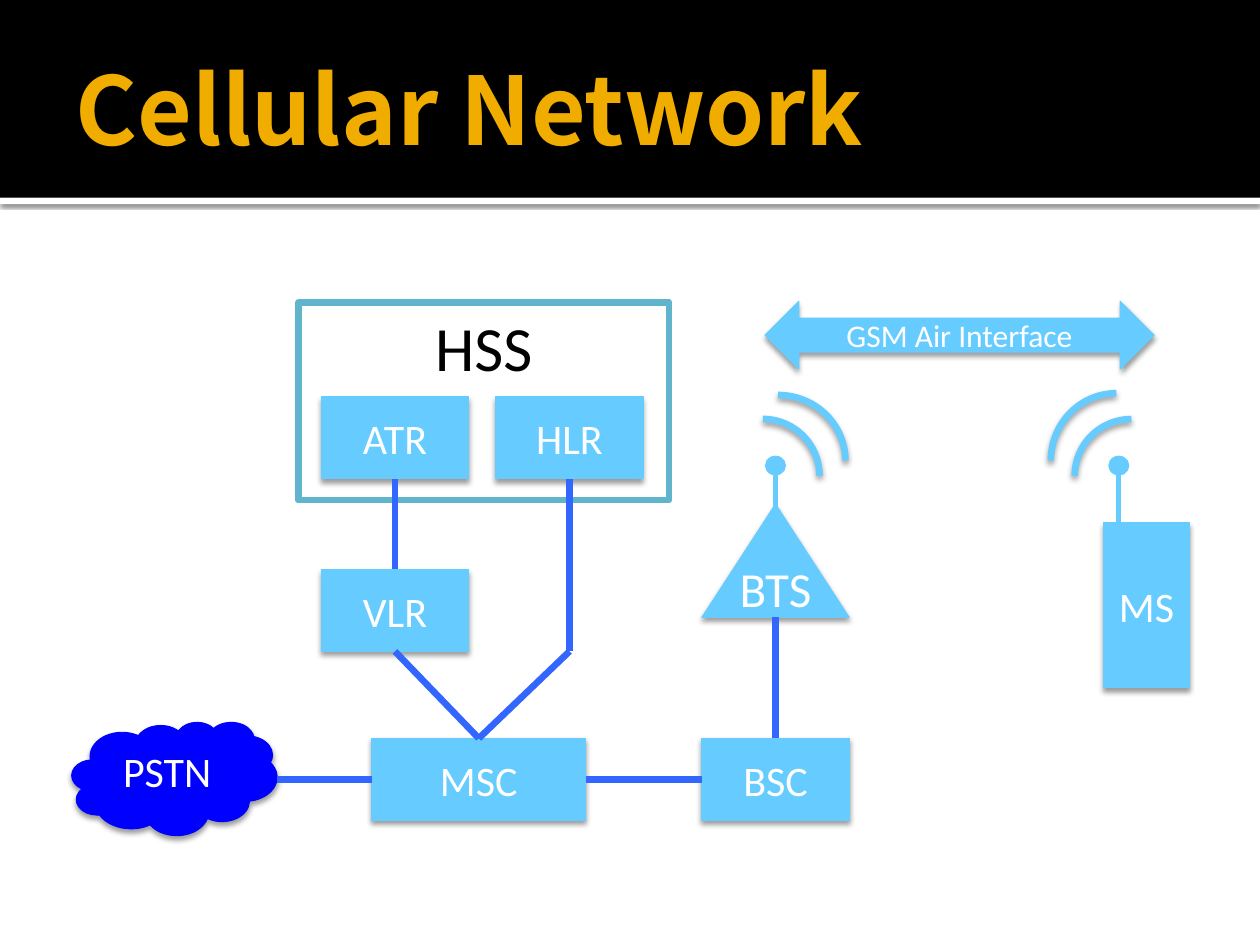
from lxml import etree
from pptx import Presentation
from pptx.dml.color import RGBColor
from pptx.enum import shapes, text
from pptx.oxml.ns import qn
from pptx.util import Inches, Pt

HUE = {"black": "000000", "white": "FFFFFF", "gold": "F0AD00", "sky": "66CCFF",
       "blue": "0000FF", "wire": "3366FF", "teal": "60B5CC"}
KIND = shapes.MSO_SHAPE
MID, TOP = text.MSO_ANCHOR.MIDDLE, text.MSO_ANCHOR.TOP
COLS, ROWS = 100, 75            # slide grid: ten cells to the inch
NODE = (11.7, 6.5)              # columns and rows of one network node
BOLD_LINE = 3.78

deck = Presentation()
deck.slide_width, deck.slide_height = Inches(10), Inches(7.5)
slide = deck.slides.add_slide(deck.slide_layouts[6])


def cell(*nums):
    return [round(n * deck.slide_width / COLS) for n in nums]


def color(name):
    return RGBColor.from_string(HUE[name])


def part(box, x, y, w, h):
    """Area inside a box, measured from its top left corner."""
    return box[0] + x, box[1] + y, w, h


def shade(item, alpha=None, blur=3.1, dist=2):
    """Give an item a soft shadow below it, or none at all."""
    props = item._element.spPr
    for old in props.findall(qn("a:effectLst")):
        props.remove(old)
    list_ = etree.SubElement(props, qn("a:effectLst"))
    if alpha:
        drop = etree.SubElement(list_, qn("a:outerShdw"), blurRad=str(Pt(blur)),
                                dist=str(Pt(dist)), dir="5400000", rotWithShape="0")
        tint = etree.SubElement(drop, qn("a:srgbClr"), val=HUE["black"])
        etree.SubElement(tint, qn("a:alpha"), val=str(alpha * 1000))


def write(item, words, size=24, hue="white", font="Calibri", bold=False,
          align=text.PP_ALIGN.CENTER, anchor=MID):
    frame = item.text_frame
    frame.word_wrap, frame.vertical_anchor = True, anchor
    para = frame.paragraphs[0]
    para.alignment = align
    run = para.add_run()
    run.text = words
    run.font.size, run.font.name, run.font.bold = Pt(size), font, bold
    run.font.color.rgb = color(hue)


def draw(kind, area, fill="sky", line="sky", width=0.5, alpha=38, blur=3.1, dist=2):
    item = slide.shapes.add_shape(kind, *cell(*area))
    if fill:
        item.fill.solid()
        item.fill.fore_color.rgb = color(fill)
    else:
        item.fill.background()
    if line:
        item.line.color.rgb = color(line)
        item.line.width = Pt(width)
    else:
        item.line.fill.background()
    shade(item, alpha, blur, dist)
    return item


def label(area, words, **form):
    item = slide.shapes.add_textbox(*cell(*area))
    write(item, words, **form)
    return item


def wire(box, x1, y1, x2, y2, hue="wire", width=BOLD_LINE):
    ends = cell(box[0] + x1, box[1] + y1, box[0] + x2, box[1] + y2)
    item = slide.shapes.add_connector(shapes.MSO_CONNECTOR.STRAIGHT, *ends)
    item.line.color.rgb = color(hue)
    item.line.width = Pt(width)
    shade(item)


def header(box):
    wide, high = box[2:]
    draw(KIND.RECTANGLE, part(box, 0, high, wide, 0.5), fill="white", line=None,
         alpha=60, blur=2.5, dist=0.8)
    draw(KIND.RECTANGLE, box, fill="black", line=None, alpha=None)
    title = label(part(box, 5, 1.7, wide - 10, 13.7), "Cellular Network", size=54,
                  hue="gold", font="Noto Sans CJK KR", bold=True,
                  align=text.PP_ALIGN.LEFT)
    title.text_frame.margin_right = Inches(0.05)


def core(box):
    w, h = NODE
    left, right, far = 19.8, 33.65, 50
    high, mid, low = 7.5, 21.2, 34.6
    hub, span = 23.8, 17
    # Outside phone network
    cloud = draw(KIND.CLOUD, part(box, 0, 33.3, 16.3, 9), fill="blue", line="blue")
    write(cloud, "PSTN", anchor=TOP)
    # Nodes
    for words, x, y, wide in (("MSC", hub, low, span), ("BSC", far, low, w),
                              ("VLR", left, mid, w), ("ATR", left, high, w),
                              ("HLR", right, high, w)):
        write(draw(KIND.RECTANGLE, part(box, x, y, wide, h)), words)
    # Subscriber server frame
    frame = draw(KIND.RECTANGLE, part(box, 18, 0, 29.4, 15.7), fill=None,
                 line="teal", width=BOLD_LINE, alpha=None)
    write(frame, "HSS", size=36, hue="black", anchor=TOP)
    # Wires
    join, row = hub + span / 2, low + h / 2
    for x, end in ((left + w / 2, mid), (right + w / 2, mid + h)):
        wire(box, x, high + h, x, end)
        wire(box, join, low, x, mid + h)
    wire(box, 16.3, row, hub, row)
    wire(box, hub + span, row, far, row)


def mast(box, x, side):
    """Antenna at column x, with waves to the right (1) or the left (-1)."""
    draw(KIND.OVAL, part(box, x - 0.8, 4.9, 1.6, 1.5), alpha=None)
    wire(box, x, 10.8, x, 6.4, hue="sky", width=3)
    for shift, y, w, h in ((-1, 1.95, 9, 9), (0.2, 0.05, 10.7, 10.4)):
        wave = draw(KIND.ARC, part(box, x + side * shift - w / 2, y, w, h),
                    fill=None, width=BOLD_LINE, blur=3.5)
        wave.rotation = 0 if side > 0 else 270


def base(box):
    wide, high = box[2:]
    draw(KIND.ISOSCELES_TRIANGLE, part(box, 0, 8.7, wide, 9))
    label(part(box, 0, 12.1, *NODE), "BTS", size=28)
    wire(box, wide / 2, 17.7, wide / 2, high)
    mast(box, wide / 2, 1)


def phone(box):
    write(draw(KIND.RECTANGLE, part(box, 0, 10.2, box[2], 13.1)), "MS")
    mast(box, 1.2, -1)


def air(box):
    write(draw(KIND.LEFT_RIGHT_ARROW, box), "GSM Air Interface", size=18)


header((0, 0, COLS, 15.7))
core((5.7, 24, 61.7, 42.3))
base((55.7, 31.3, 11.7, 27.3))
phone((87.6, 31.3, 6.8, 23.3))
air((60.7, 23.9, 30.9, 5.4))
deck.save("out.pptx")
